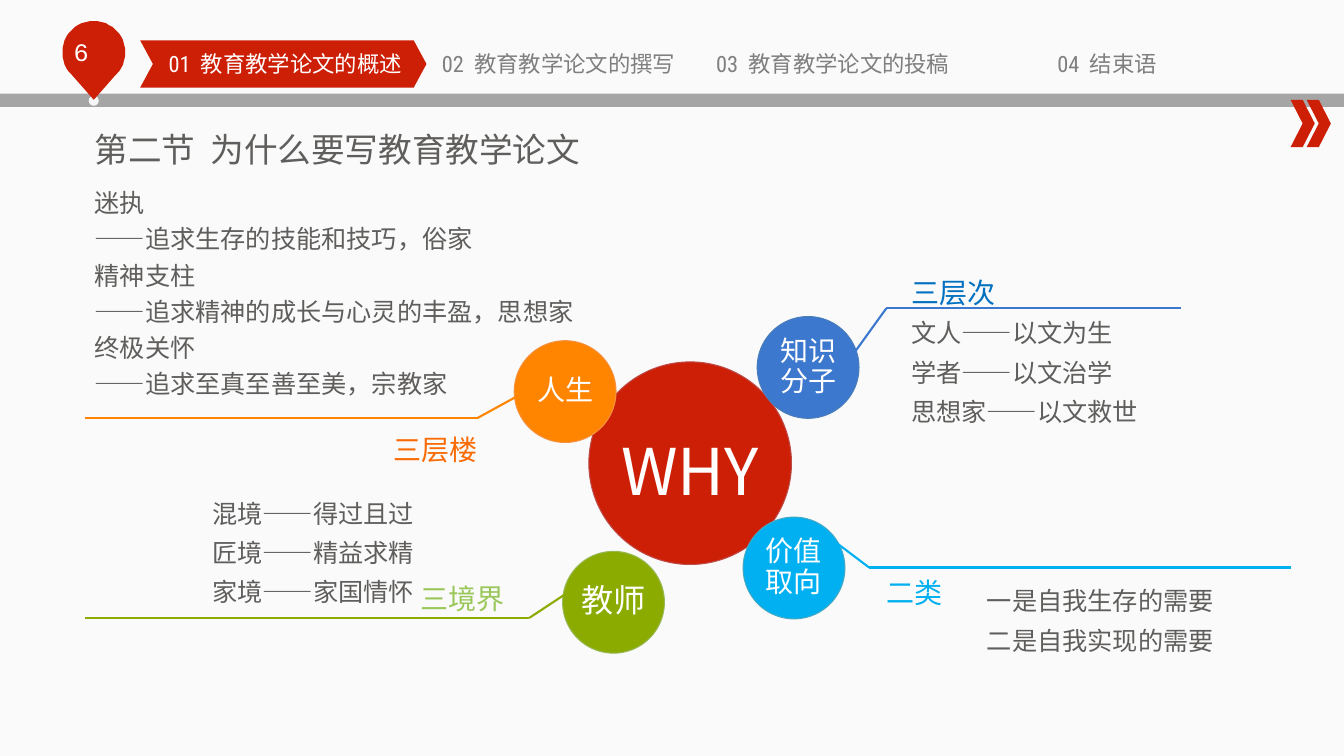
import math
from dataclasses import dataclass

from lxml import etree
from pptx import Presentation
from pptx import util as u
from pptx.dml.color import RGBColor
from pptx.enum import shapes, text
from pptx.oxml.ns import qn

PX = 9144  # one px is a hundredth of an inch
SANS, NARROW, MONO = "Noto Sans CJK SC", "Roboto Condensed", "Courier New"
COLORS = {
    "top": "FAFAFA", "bottom": "FCFCFC", "bar": "A5A5A5", "dot": "F6F6F6",
    "red": "CD1F06", "red_edge": "BD4B48", "blue": "3C78CE", "blue_edge": "4A7DBA",
    "cyan": "00B0F0", "cyan_edge": "46A9C4", "green": "8BAB00", "green_edge": "97B853",
    "orange": "FF8500", "orange_edge": "F5913F", "white": "FFFFFF", "muted": "7F7F7F",
    "body": "5F5E5C", "levels": "0070C0", "realms": "9AC759", "floors": "F96C05",
}
LEFT, CENTER = text.PP_ALIGN.LEFT, text.PP_ALIGN.CENTER
TOP, MIDDLE = text.MSO_ANCHOR.TOP, text.MSO_ANCHOR.MIDDLE
CHEVRON, OVAL = shapes.MSO_SHAPE.CHEVRON, shapes.MSO_SHAPE.OVAL
INSETS = (10, 5, 10, 5)


@dataclass
class Line:
    words: str
    size: int = 18
    color: str = "body"
    font: str = SANS


@dataclass
class TextBox:
    at: tuple[int, int, int, int]
    lines: list[Line]
    spacing: float = 1.0
    align: text.PP_ALIGN = LEFT
    anchor: text.MSO_ANCHOR = TOP
    insets: tuple[int, int, int, int] = INSETS


@dataclass
class Bubble:
    left: int
    top: int
    size: int
    color: str
    line: Line
    insets: tuple[int, int, int, int] = (3, 3, 3, 3)


@dataclass
class Leader:
    color: str
    points: list[tuple[int, int]]


def rgb(name: str) -> RGBColor:
    return RGBColor.from_string(COLORS[name])


def write(frame, lines: list[Line], spacing: float, align, anchor, insets) -> None:
    frame.word_wrap = True
    frame.vertical_anchor = anchor
    frame.margin_left, frame.margin_top, frame.margin_right, frame.margin_bottom = (
        inset * PX for inset in insets)
    for index, line in enumerate(lines):
        para = frame.add_paragraph() if index else frame.paragraphs[0]
        para.alignment = align
        para.line_spacing = spacing
        span = para.add_run()
        span.text = line.words
        span.font.size = u.Pt(line.size)
        span.font.name = line.font
        span.font.color.rgb = rgb(line.color)
        etree.SubElement(span.font._element, qn("a:ea"), typeface=SANS)


def draw_text(page, item: TextBox) -> None:
    box = page.shapes.add_textbox(*(length * PX for length in item.at))
    write(box.text_frame, item.lines, item.spacing, item.align, item.anchor, item.insets)


def paint(shape, color: str, edge: str = "") -> None:
    shape.shadow.inherit = False
    shape.fill.solid()
    shape.fill.fore_color.rgb = rgb(color)
    if edge:
        shape.line.color.rgb = rgb(edge)
        shape.line.width = u.Pt(0.75)
    else:
        shape.line.fill.background()


def draw_shape(page, kind, at: tuple[int, int, int, int], color: str, edge: str = ""):
    shape = page.shapes.add_shape(kind, *(length * PX for length in at))
    paint(shape, color, edge)
    return shape


def draw_bubble(page, bubble: Bubble) -> None:
    at = (bubble.left, bubble.top, bubble.size, bubble.size)
    circle = draw_shape(page, OVAL, at, bubble.color, bubble.color + "_edge")
    write(circle.text_frame, [bubble.line], 0.9, CENTER, MIDDLE, bubble.insets)


def draw_leader(page, leader: Leader) -> None:
    for start, end in zip(leader.points, leader.points[1:]):
        line = page.shapes.add_connector(
            shapes.MSO_CONNECTOR.STRAIGHT, *(length * PX for length in start + end))
        line.line.color.rgb = rgb(leader.color)
        line.line.width = u.Pt(1.5)
        etree.SubElement(line._element.spPr, qn("a:effectLst"))


def draw_pin(page, x: int, y: int, radius: int, tip: int) -> None:
    """A round head, open for a quarter turn below, closed by a point."""
    angles = [math.radians(135 + 7.5 * step) for step in range(37)]
    arc = [(x + radius * math.cos(a), y + radius * math.sin(a)) for a in angles]
    builder = page.shapes.build_freeform(x, tip, scale=PX)
    builder.add_line_segments(arc, close=True)
    paint(builder.convert_to_shape(), "red")


CHAPTERS = ["01  教育教学论文的概述", "02  教育教学论文的撰写",
            "03  教育教学论文的投稿", "04  结束语"]

BUBBLES = [
    Bubble(584, 359, 201, "red", Line("WHY", 46, "white"), (0, 23, 0, 0)),
    Bubble(751, 314, 101, "blue", Line("知识分子", 20, "white")),
    Bubble(737, 513, 101, "cyan", Line("价值取向", 20, "white")),
    Bubble(558, 547, 101, "green", Line("教师", 23, "white")),
    Bubble(510, 338, 101, "orange", Line("人生", 20, "white")),
]

LEADERS = [
    Leader("green", [(572, 582), (525, 613), (84, 613)]),
    Leader("orange", [(515, 392), (473, 415), (84, 415)]),
    Leader("blue", [(848, 349), (879, 306), (1171, 306)]),
    Leader("cyan", [(817, 529), (862, 563), (1280, 563)]),
]

TEXTS = [
    TextBox((37, 31, 87, 40), [Line("6", 18, "white", MONO)], align=CENTER),
    TextBox((84, 123, 543, 50), [Line("第二节  为什么要写教育教学论文", 24)]),
    TextBox((84, 175, 621, 226), [
        Line("迷执"), Line("——追求生存的技能和技巧，俗家"),
        Line("精神支柱"), Line("——追求精神的成长与心灵的丰盈，思想家"),
        Line("终极关怀"), Line("——追求至真至善至美，宗教家")], 1.2),
    TextBox((894, 258, 308, 170), [
        Line("三层次", 20, "levels"), Line("文人——以文为生"),
        Line("学者——以文治学"), Line("思想家——以文救世")], 1.3),
    TextBox((201, 480, 313, 166), [
        Line("混境——得过且过"), Line("匠境——精益求精"), Line("家境——家国情怀")], 1.3),
    TextBox((969, 567, 357, 92), [
        Line("一是自我生存的需要"), Line("二是自我实现的需要")], 1.3),
    TextBox((407, 562, 120, 53), [Line("三境界", 20, "realms")], 1.3),
    TextBox((869, 566, 90, 46), [Line("二类", 20, "cyan")]),
    TextBox((380, 424, 120, 46), [Line("三层楼", 20, "floors")]),
]


def main() -> None:
    deck = Presentation()
    deck.slide_width, deck.slide_height = 1333 * PX, 750 * PX
    page = deck.slides.add_slide(deck.slide_layouts[6])

    # Background
    fill = page.background.fill
    fill.gradient()
    fill.gradient_angle = 270
    for stop, name in zip(fill.gradient_stops, ("top", "bottom")):
        stop.color.rgb = rgb(name)

    # Header bar, page pin and arrows
    draw_shape(page, shapes.MSO_SHAPE.RECTANGLE, (0, 93, 1333, 13), "bar")
    for left in (1280, 1296):
        draw_shape(page, CHEVRON, (left, 99, 24, 47), "red")
    draw_shape(page, OVAL, (88, 95, 10, 10), "dot")
    draw_pin(page, 93, 52, 31, 99)

    # Chapter navigation, first chapter active
    draw_shape(page, CHEVRON, (139, 40, 284, 47), "red").adjustments[0] = 0.27
    for index, chapter in enumerate(CHAPTERS):
        line = Line(chapter, 16, "muted" if index else "white", NARROW)
        draw_text(page, TextBox((159 + 815 * index // 3, 49, 248, 29), [line],
                                align=CENTER, anchor=MIDDLE, insets=(0, 0, 0, 0)))

    # Diagram and its notes
    for bubble in BUBBLES:
        draw_bubble(page, bubble)
    for leader in LEADERS:
        draw_leader(page, leader)
    for item in TEXTS:
        draw_text(page, item)

    deck.save("out.pptx")


if __name__ == "__main__":
    main()
